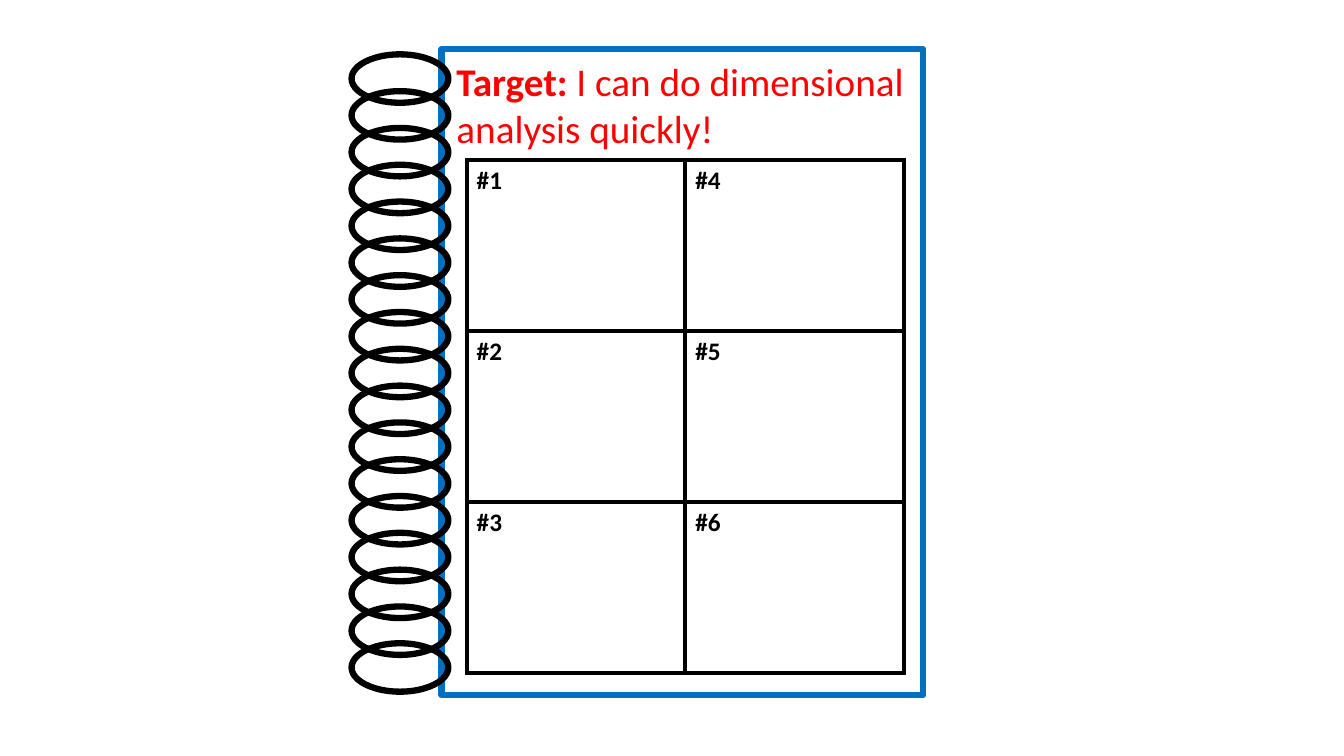
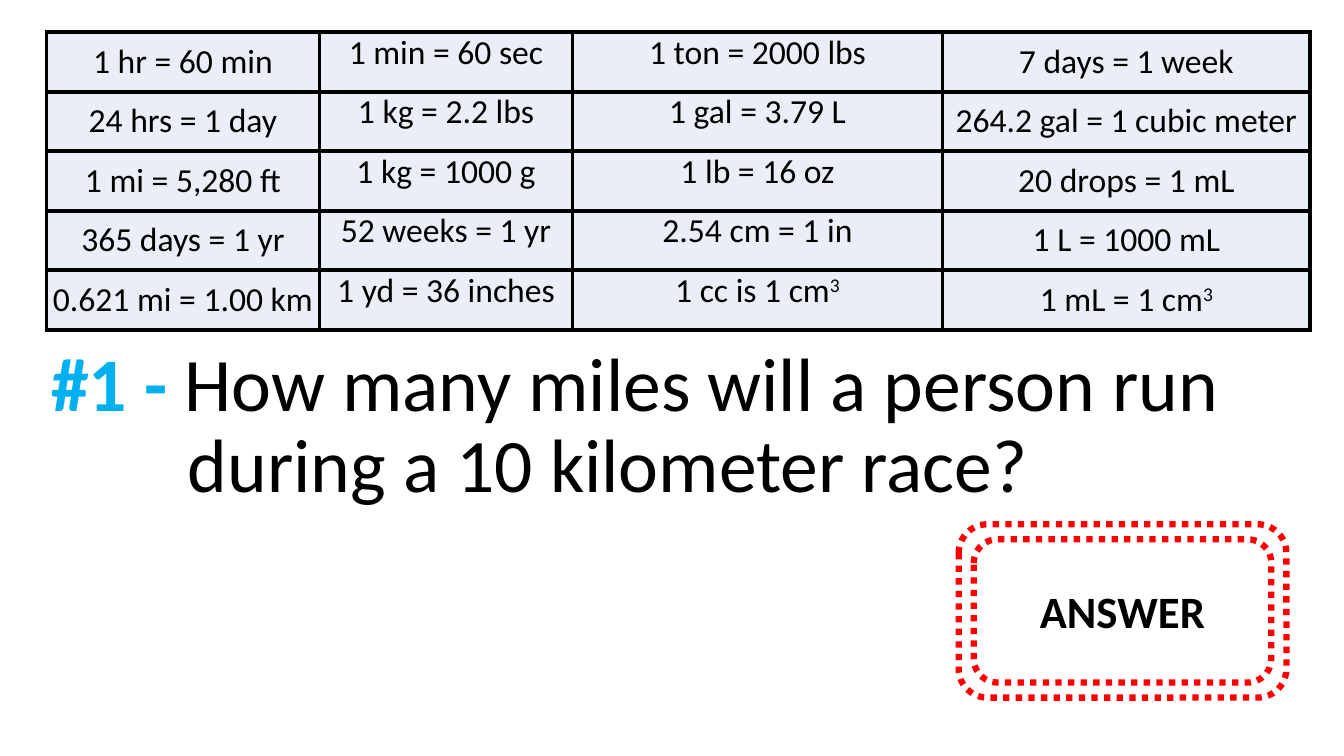
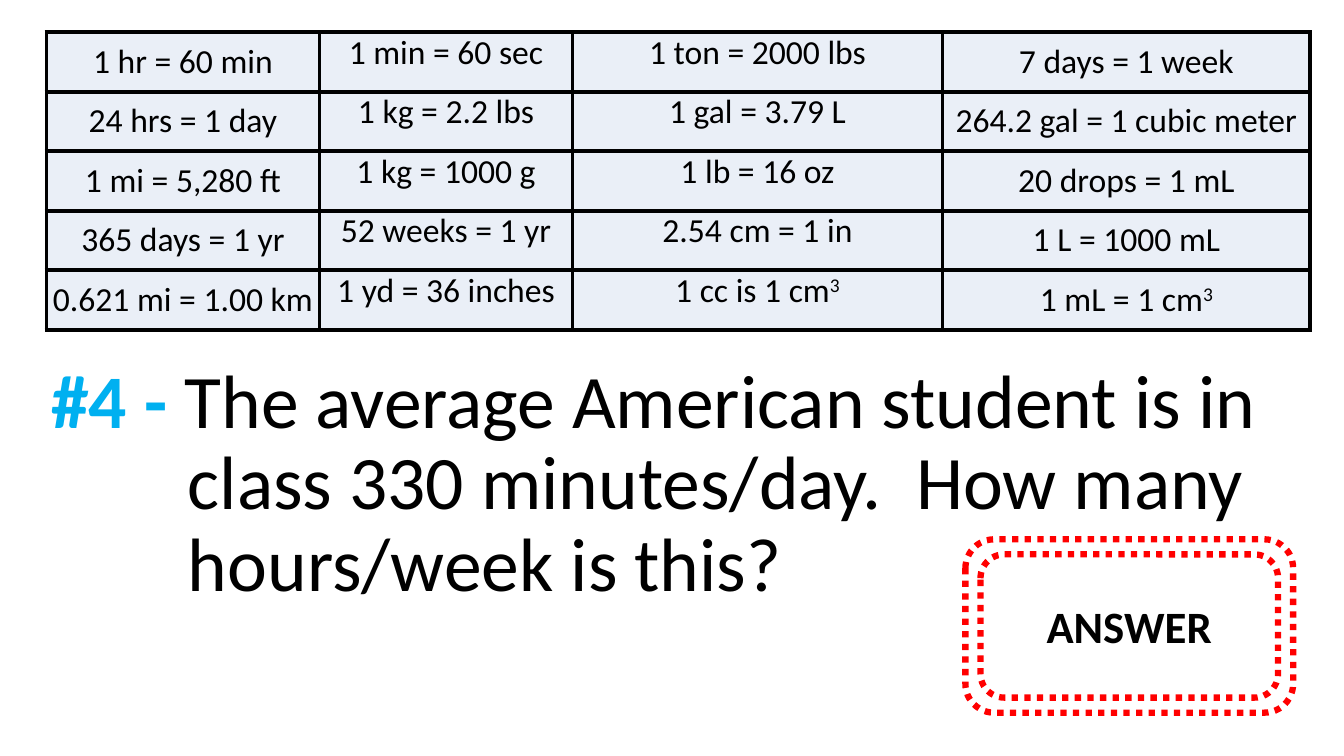
"""Builds a notebook slide and two dimensional analysis question slides."""
from lxml.etree import SubElement
from pptx import Presentation
from pptx.dml.color import RGBColor
from pptx.enum.dml import MSO_LINE
from pptx.enum.shapes import MSO_SHAPE
from pptx.enum.text import MSO_ANCHOR, MSO_AUTO_SIZE, PP_ALIGN
from pptx.oxml.ns import qn
from pptx.util import Cm, Pt

FONT = "Calibri"
BLACK, WHITE, RED = "000000", "FFFFFF", "FF0000"
BLUE, SKY, PALE = "0070C0", "00B0F0", "EAEFF7"
EDGE = 4.5

TARGET = [("Target: ", True, RED), ("I can do dimensional analysis quickly!", False, RED)]
BOXES = [("#1", "#4"), ("#2", "#5"), ("#3", "#6")]
FACTS = [
    ("1 hr = 60 min", "1 min = 60 sec", "1 ton = 2000 lbs", "7 days = 1 week"),
    ("24 hrs = 1 day", "1 kg = 2.2 lbs", "1 gal = 3.79 L", "264.2 gal = 1 cubic meter"),
    ("1 mi = 5,280 ft", "1 kg = 1000 g", "1 lb = 16 oz", "20 drops = 1 mL"),
    ("365 days = 1 yr", "52 weeks = 1 yr", "2.54 cm = 1 in", "1 L = 1000 mL"),
    ("0.621 mi = 1.00 km", "1 yd = 36 inches", "1 cc is 1 cm^3", "1 mL = 1 cm^3"),
]
ASKS = [
    {"tag": "#1 - ", "text": "How many miles will a person run during a 10 kilometer race?",
     "high": 4.45, "spot": (24.16, 13.21)},
    {"tag": "#4 - ", "text": "The average American student is in class 330 minutes/day.  "
     "How many hours/week is this?", "high": 6.93, "spot": (24.33, 13.59)},
]
RINGS, FIRST, LAST = 17, 1.37, 16.21


def tint(code):
    return RGBColor.from_string(code)


def write(frame, text, size=18, bold=False, color=BLACK, align=PP_ALIGN.LEFT,
          anchor=None, space=None, hang=0):
    """Fill a frame from a string or (text, bold, colour) runs; ^ raises what follows."""
    runs = [(text, bold, color)] if isinstance(text, str) else text
    frame.word_wrap = True
    if anchor is not None:
        frame.vertical_anchor = anchor
        frame.auto_size = MSO_AUTO_SIZE.NONE
    para = frame.paragraphs[0]
    para.alignment = align
    if space:
        para.line_spacing = space
    if hang:
        props = para._p.get_or_add_pPr()
        props.set("marL", str(Cm(hang)))
        props.set("indent", str(-Cm(hang)))
    for words, heavy, shade in runs:
        for level, part in enumerate(words.split("^")):
            run = para.add_run()
            run.text = part
            font = run.font
            font.name, font.size, font.bold = FONT, Pt(size), heavy
            font.color.rgb = tint(shade)
            if level:
                run._r.get_or_add_rPr().set("baseline", "30000")


def place(shape, *area):
    shape.left, shape.top, shape.width, shape.height = map(Cm, area)


def draw(shapes, kind, area, line, fill=None, dash=None):
    shape = shapes.add_shape(kind, *map(Cm, area))
    shape.shadow.inherit = False
    if fill:
        shape.fill.solid()
        shape.fill.fore_color.rgb = tint(fill)
    else:
        shape.fill.background()
    shape.line.color.rgb = tint(line)
    shape.line.width = Pt(EDGE)
    if dash:
        shape.line.dash_style = dash
    return shape


def frame_cell(cell):
    props = cell._tc.get_or_add_tcPr()
    for place_no, side in enumerate(("lnL", "lnR", "lnT", "lnB")):
        line = props.makeelement(qn("a:" + side), {"w": str(Pt(3))})
        props.insert(place_no, line)
        fill = SubElement(line, qn("a:solidFill"))
        SubElement(fill, qn("a:srgbClr"), val=BLACK)


def grid(slide, rows, left, top, wide, high, fill=None, pads=None, mids=(), **style):
    """Add a table; pads are cell margins by column and mids the centred columns."""
    area = (left, top, sum(wide), high * len(rows))
    table = slide.shapes.add_table(len(rows), len(wide), *map(Cm, area)).table
    table.first_row = table.horz_banding = False
    for col, size in zip(table.columns, wide):
        col.width = Cm(size)
    for y, row in enumerate(rows):
        table.rows[y].height = Cm(high)
        for x, text in enumerate(row):
            cell = table.cell(y, x)
            if fill:
                cell.fill.solid()
                cell.fill.fore_color.rgb = tint(fill)
            else:
                cell.fill.background()
            cell.vertical_anchor = MSO_ANCHOR.MIDDLE if x in mids else MSO_ANCHOR.TOP
            if pads:
                pad = Cm(pads[x])
                cell.margin_left = cell.margin_right = pad
                cell.margin_top = cell.margin_bottom = pad
            frame_cell(cell)
            write(cell.text_frame, text, **style)


def notebook(slide):
    title = slide.shapes.title
    place(title, 11.25, 1.32, 12.22, 2.64)
    write(title.text_frame, TARGET, size=28, anchor=MSO_ANCHOR.TOP)
    page = draw(slide.shapes, MSO_SHAPE.RECTANGLE, (11.13, 1.24, 12.14, 16.28), BLUE, WHITE)
    title.element.addprevious(page.element)
    coil = slide.shapes.add_group_shape()
    step = (LAST - FIRST) / (RINGS - 1)
    for ring in range(RINGS):
        draw(coil.shapes, MSO_SHAPE.OVAL, (8.86, FIRST + ring * step, 2.44, 1.22), BLACK)
    grid(slide, BOXES, 11.76, 4.04, (5.51, 5.51), 4.31, size=18, bold=True)


def question(slide, ask):
    title = slide.shapes.title
    place(title, 1.04, 8.51, 32, ask["high"])
    write(title.text_frame, [(ask["tag"], True, SKY), (ask["text"], False, BLACK)],
          size=54, anchor=MSO_ANCHOR.BOTTOM, space=0.9, hang=3.44)
    grid(slide, FACTS, 1.17, 0.81, (6.88, 6.38, 9.32, 9.27), 1.5, fill=PALE,
         pads=(0.03, 0, 0, 0.03), mids=(0, 3), size=24, align=PP_ALIGN.CENTER)
    left, top = ask["spot"]
    for gap in (0, 0.38):
        area = (left + gap, top + gap, 8.26 - 2 * gap, 4.37 - 2 * gap)
        card = draw(slide.shapes, MSO_SHAPE.ROUNDED_RECTANGLE, area, RED, WHITE,
                    MSO_LINE.ROUND_DOT)
    write(card.text_frame, "ANSWER", size=32, bold=True, align=PP_ALIGN.CENTER,
          anchor=MSO_ANCHOR.MIDDLE)


def main():
    deck = Presentation()
    deck.slide_width, deck.slide_height = Cm(33.87), Cm(19.05)
    layout = deck.slide_layouts.get_by_name("Title Only")
    notebook(deck.slides.add_slide(layout))
    for ask in ASKS:
        question(deck.slides.add_slide(layout), ask)
    deck.save("out.pptx")


if __name__ == "__main__":
    main()
